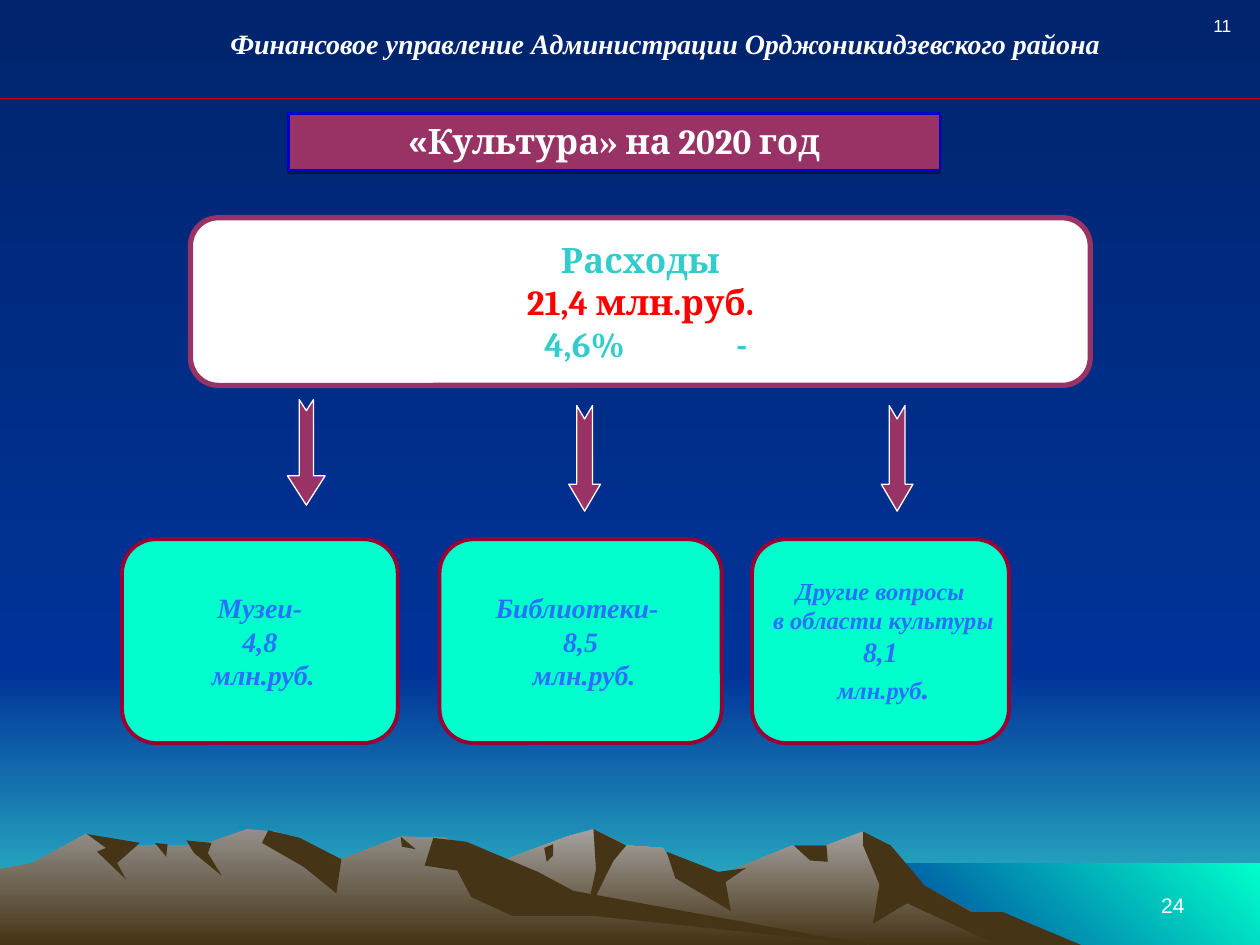
from lxml.etree import SubElement
from pptx import Presentation
from pptx.dml.color import RGBColor
from pptx.enum.shapes import MSO_CONNECTOR, MSO_SHAPE
from pptx.enum.text import MSO_ANCHOR, MSO_AUTO_SIZE, PP_ALIGN
from pptx.oxml.ns import qn
from pptx.util import Cm, Pt

WHITE = RGBColor(0xFF, 0xFF, 0xFF)
BLACK = RGBColor(0, 0, 0)
RED = RGBColor(0xFF, 0, 0)
DARK_RED = RGBColor(0xC0, 0, 0)
PLUM = RGBColor(0x99, 0x33, 0x66)
WINE = RGBColor(0x99, 0, 0x33)
TEAL = RGBColor(0x33, 0xCC, 0xCC)
MINT = RGBColor(0, 0xFF, 0xCC)
TEXT_BLUE = RGBColor(0x29, 0x70, 0xFF)
EDGE_BLUE = RGBColor(0, 0, 0xCC)
NIGHT = RGBColor(0, 0x24, 0x6D)
BLUE = RGBColor(0, 0x33, 0x99)
BROWN = RGBColor(0x46, 0x34, 0x16)
ROCK = RGBColor(0xA5, 0xA2, 0x9F)
ROCK_LEFT = RGBColor(0x93, 0x8F, 0x8B)

SERIF, SLAB, SANS = "Times New Roman", "Cambria", "Arial"
GRID = Cm(0.0254)  # mountain points are counted in this unit

# (box, colours, gradient angle)
SKY_AND_SEA = [
    ((0, 13.54, 25.4, 5.51), (BLUE, TEAL), 270),
    ((0, 0, 25.4, 13.54), (NIGHT, BLUE), 270),
    ((17.35, 17.4, 8.05, 1.65), (BLUE, MINT), 45),
]
# (colours, outline points)
MOUNTAINS = [
    ((ROCK, BROWN), [
        (258, 750), (327, 709), (394, 685), (450, 664), (471, 658), (497, 671), (526, 673),
        (536, 690), (566, 697), (629, 671), (656, 671), (685, 660), (723, 698), (821, 750)]),
    ((BROWN,), [
        (685, 660), (707, 671), (734, 703), (771, 724), (796, 724), (858, 750), (792, 750),
        (720, 717), (693, 733), (698, 702), (685, 671)]),
    ((BROWN,), [(471, 658), (497, 671), (487, 683), (465, 727), (473, 690)]),
    ((BROWN,), [(529, 676), (570, 692), (592, 689), (576, 700), (580, 723), (536, 697)]),
    ((BROWN,), [(630, 671), (656, 671), (657, 684), (643, 683)]),
    ((BROWN,), [(432, 673), (439, 670), (439, 679), (434, 684)]),
    ((ROCK_LEFT, BROWN), [
        (0, 750), (0, 690), (26, 685), (68, 662), (94, 671), (160, 671), (196, 658),
        (219, 660), (271, 682), (318, 664), (354, 665), (432, 712), (690, 750)]),
    ((BROWN,), [(213, 659), (238, 665), (271, 682), (267, 709), (241, 688), (208, 669)]),
    ((BROWN,), [
        (344, 665), (370, 668), (427, 692), (455, 707), (690, 750), (472, 727), (407, 727),
        (374, 712), (363, 691), (337, 687)]),
    ((BROWN,), [(318, 664), (330, 674), (319, 672)]),
    ((BROWN,), [(148, 667), (168, 669), (165, 677), (176, 695), (154, 677)]),
    ((BROWN,), [(123, 669), (133, 670), (132, 680)]),
    ((BROWN,), [(69, 662), (111, 669), (93, 685), (100, 698), (77, 676), (84, 673)]),
]

# Paragraphs are lists of runs: (text, size, colour, font)
HEADER = [[("Финансовое управление Администрации Орджоникидзевского района", 16, WHITE, SERIF)]]
TITLE = [[("«", 20, WHITE, SANS), ("Культура» на 2020 год", 20, WHITE, SLAB)]]
EXPENSES = [
    [("Расходы", 20, TEAL, SLAB)],
    [("21,4 млн.руб.", 20, RED, SLAB)],
    [("-\t4,6%", 20, TEAL, SLAB)],
]
# (left, width, lines of (text, size) runs)
CATEGORIES = [
    (2.46, 5.56, [[("Музеи-", 16)], [("4,8", 16)], [(" млн.руб.", 16)]]),
    (8.86, 5.69, [[("Библиотеки- ", 16)], [("8,5", 16)], [(" млн.руб.", 16)]]),
    (15.16, 5.18, [[("Другие вопросы", 14)], [(" в области культуры", 14)],
                   [("8,1", 16)], [(" млн.руб", 14), (".", 18)]]),
]
# (left, top, height, adjustments)
ARROWS = [
    (5.11, 8.74, 0.76, (0.38, 0.78)),
    (10.72, 8.92, 0.64, (0.5, 0.85)),
    (17.02, 8.92, 0.64, (0.5, 0.85)),
]
# (text, size, alignment, anchor, box)
NUMBERS = [
    ("24", 12, PP_ALIGN.RIGHT, MSO_ANCHOR.BOTTOM, (18.21, 17.35, 5.92, 1.27)),
    ("11", 10, PP_ALIGN.LEFT, MSO_ANCHOR.TOP, (24.21, 0.18, 0.91, 0.69)),
]


def write(sp, paragraphs, align=PP_ALIGN.CENTER, anchor=MSO_ANCHOR.TOP,
          bold=True, italic=False, wrap=True):
    tf = sp.text_frame
    tf.word_wrap = wrap
    tf.auto_size = MSO_AUTO_SIZE.NONE
    tf.vertical_anchor = anchor
    for i, runs in enumerate(paragraphs):
        p = tf.add_paragraph() if i else tf.paragraphs[0]
        p.alignment = align
        for text, size, color, font in runs:
            r = p.add_run()
            r.text = text
            r.font.size, r.font.name = Pt(size), font
            r.font.bold, r.font.italic = bold, italic
            r.font.color.rgb = color


def paint(sp, fill, line, width):
    sp.fill.solid()
    sp.fill.fore_color.rgb = fill
    sp.line.color.rgb = line
    sp.line.width = Pt(width)


def add_block(s, kind, box, fill, line, width):
    sp = s.shapes.add_shape(kind, *map(Cm, box))
    sp.shadow.inherit = False
    paint(sp, fill, line, width)
    return sp


def shade(fill, colors, angle=270):
    """Fill with one colour or with a two-colour gradient."""
    if len(colors) == 1:
        fill.solid()
        fill.fore_color.rgb = colors[0]
        return
    fill.gradient()
    fill.gradient_angle = angle
    for stop, color in zip(fill.gradient_stops, colors):
        stop.color.rgb = color


def finish_scenery(sp, colors, angle=270):
    sp.shadow.inherit = False
    sp.line.fill.background()
    shade(sp.fill, colors, angle)


prs = Presentation()
prs.slide_width, prs.slide_height = Cm(25.4), Cm(19.05)
s = prs.slides.add_slide(prs.slide_layouts[5])
shade(s.background.fill, (NIGHT, BLUE))

for box, colors, angle in SKY_AND_SEA:
    finish_scenery(s.shapes.add_shape(MSO_SHAPE.RECTANGLE, *map(Cm, box)), colors, angle)

for colors, points in MOUNTAINS:
    builder = s.shapes.build_freeform(*points[0], scale=GRID)
    builder.add_line_segments(points[1:], close=True)
    finish_scenery(builder.convert_to_shape(), colors)

header = s.shapes.add_textbox(Cm(2.21), Cm(0.41), Cm(22.4), Cm(0.94))
write(header, HEADER, italic=True)

rule = s.shapes.add_connector(MSO_CONNECTOR.STRAIGHT, 0, Cm(1.98), prs.slide_width, Cm(1.98))
rule.line.color.rgb = DARK_RED
rule.line.width = Pt(0.75)
SubElement(rule.element.spPr, qn("a:effectLst"))

title = s.shapes.title
title.element.getparent().append(title.element)  # in front of the landscape
title.left, title.top, title.width, title.height = map(Cm, (5.82, 2.29, 13.13, 1.14))
paint(title, PLUM, EDGE_BLUE, 1.5)
write(title, TITLE)
effects = SubElement(title.element.spPr, qn("a:effectLst"))
shadow = SubElement(effects, qn("a:outerShdw"), dist=str(Pt(1.6)), dir="5400000", rotWithShape="0")
shadow_color = SubElement(shadow, qn("a:srgbClr"), val=str(BLACK))
SubElement(shadow_color, qn("a:alpha"), val="38000")

card = add_block(s, MSO_SHAPE.ROUNDED_RECTANGLE, (3.84, 4.39, 18.14, 3.38), WHITE, PLUM, 3)
write(card, EXPENSES, anchor=MSO_ANCHOR.MIDDLE)
tf = card.text_frame
tf.margin_left = tf.margin_right = tf.margin_top = tf.margin_bottom = 0
change = tf.paragraphs[-1]
change.alignment = PP_ALIGN.LEFT
pPr = change._p.get_or_add_pPr()
pPr.set("marL", str(Cm(11.5)))
pPr.set("indent", str(Cm(-0.66)))

for left, width, lines in CATEGORIES:
    sp = add_block(s, MSO_SHAPE.ROUNDED_RECTANGLE, (left, 10.87, width, 4.11), MINT, WINE, 2.25)
    paragraphs = [[(text, size, TEXT_BLUE, SERIF) for text, size in runs] for runs in lines]
    write(sp, paragraphs, anchor=MSO_ANCHOR.MIDDLE, italic=True, wrap=False)

for left, top, height, adjustments in ARROWS:
    sp = add_block(s, MSO_SHAPE.NOTCHED_RIGHT_ARROW, (left, top, 2.13, height), PLUM, WHITE, 0.75)
    sp.rotation = 90
    for i, value in enumerate(adjustments):
        sp.adjustments[i] = value

for text, size, align, anchor, box in NUMBERS:
    sp = s.shapes.add_textbox(*map(Cm, box))
    write(sp, [[(text, size, WHITE, SANS)]], align, anchor, bold=False, wrap=False)

prs.save("out.pptx")
